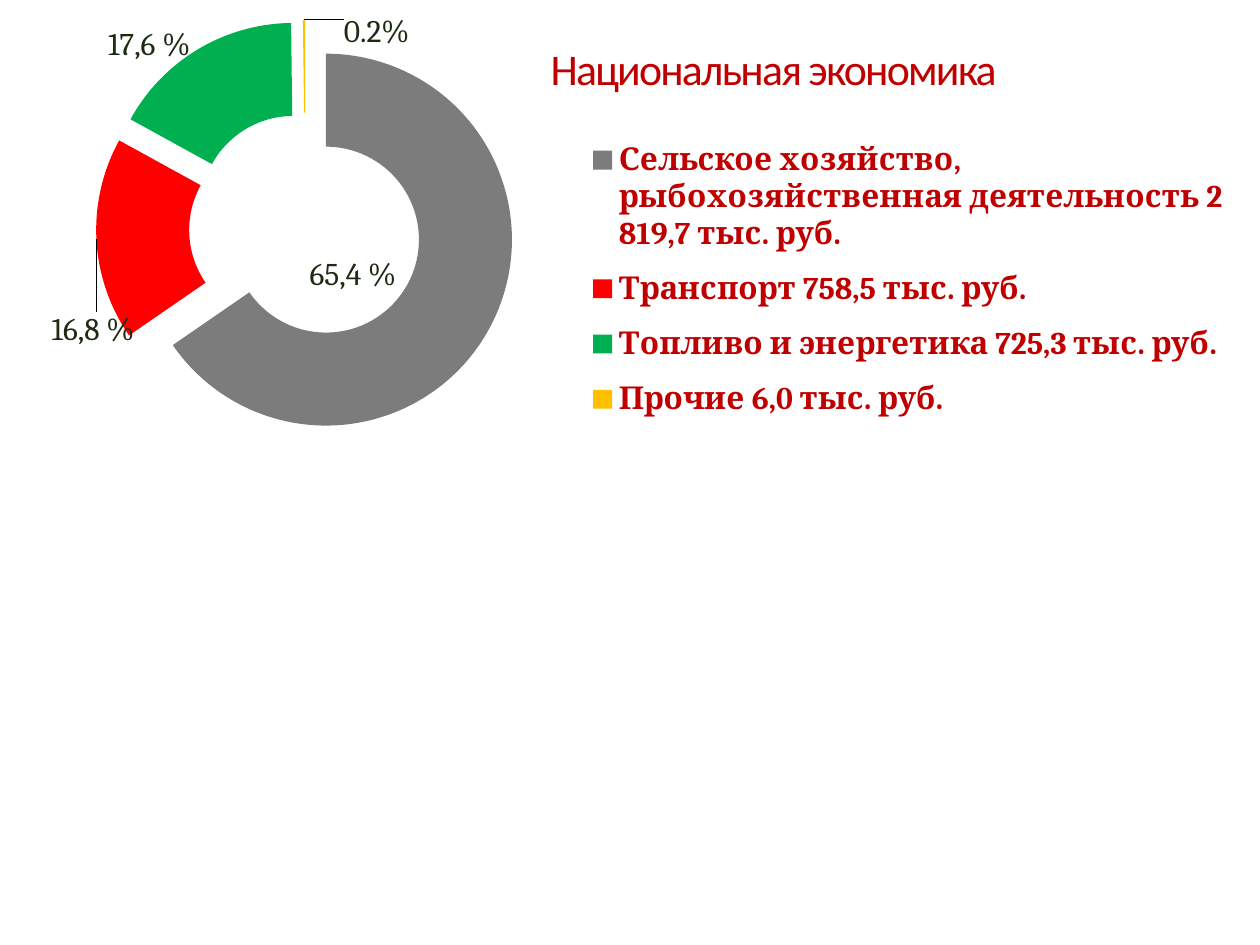
from dataclasses import dataclass
from typing import Optional

from lxml import etree
from pptx import Presentation
from pptx.chart import data as cd
from pptx.dml.color import RGBColor
from pptx.enum import chart as ec
from pptx.enum import text as et
from pptx.oxml import ns
from pptx.util import Inches, Pt

DARK_RED = RGBColor(0xC0, 0x00, 0x00)
INK = RGBColor(0x1C, 0x2B, 0x12)
GRAY = RGBColor(0x7C, 0x7C, 0x7C)
RED = RGBColor(0xFF, 0x00, 0x00)
GREEN = RGBColor(0x00, 0xB0, 0x50)
AMBER = RGBColor(0xFF, 0xC0, 0x00)
PERCENT = "0.0%"


@dataclass
class Sector:
    name: str
    share: float
    color: RGBColor
    label: Optional[str]
    dx: float
    dy: float


SECTORS = [
    Sector("Сельское хозяйство, рыбохозяйственная деятельность 2 819,7 тыс. руб.",
           0.654, GRAY, "65,4 %", -0.08, -0.06),
    Sector("Транспорт 758,5 тыс. руб.", 0.176, RED, "16,8 %", -0.05, 0.19),
    Sector("Топливо и энергетика 725,3 тыс. руб.", 0.168, GREEN, "17,6 %", -0.06, -0.09),
    Sector("Прочие 6,0 тыс. руб.", 0.002, AMBER, None, 0.06, -0.07),
]


def style_font(font, size: float, name: str, color: RGBColor, bold: bool = False) -> None:
    font.size = Pt(size)
    font.name = name
    font.bold = bold
    font.color.rgb = color


def make_layout(**values):
    layout = etree.Element(ns.qn("c:layout"))
    manual = etree.SubElement(layout, ns.qn("c:manualLayout"))
    for tag, value in values.items():
        etree.SubElement(manual, ns.qn(f"c:{tag}")).set("val", str(value))
    return layout


def add_title(s) -> None:
    sp = s.shapes.title
    sp.left, sp.top, sp.width, sp.height = (Inches(v) for v in (4.27, 0.13, 5.53, 0.67))
    tf = sp.text_frame
    tf.text = "Национальная экономика"
    tf.vertical_anchor = et.MSO_ANCHOR.BOTTOM
    p = tf.paragraphs[0]
    p.alignment = et.PP_ALIGN.LEFT
    p.line_spacing = 0.9
    r = p.runs[0]
    style_font(r.font, 25, "Calibri", DARK_RED)
    r.font._element.set("spc", "-100")


def format_sector(point, sector: Sector) -> None:
    point.format.fill.solid()
    point.format.fill.fore_color.rgb = sector.color
    point.format.line.fill.background()
    label = point.data_label
    if sector.label:
        label.text_frame.text = sector.label
        style_font(label.text_frame.paragraphs[0].runs[0].font, 18, "Cambria", INK)
    else:
        style_font(label.font, 18, "Cambria", INK)


def add_chart(s) -> None:
    data = cd.CategoryChartData(number_format=PERCENT)
    data.categories = [sector.name for sector in SECTORS]
    data.add_series("Series 1", [sector.share for sector in SECTORS])
    chart = s.shapes.add_chart(ec.XL_CHART_TYPE.DOUGHNUT, Inches(0.41), Inches(-0.03),
                               Inches(9.57), Inches(3.88), data).chart
    chart.has_title = False
    style_font(chart.font, 18, "Cambria", INK)

    chart.has_legend = True
    legend = chart.legend
    legend.position = ec.XL_LEGEND_POSITION.RIGHT
    legend.include_in_layout = False
    style_font(legend.font, 18, "Cambria", DARK_RED, bold=True)
    for old in legend._element.findall(ns.qn("c:layout")):
        legend._element.remove(old)
    legend._element.find(ns.qn("c:legendPos")).addnext(
        make_layout(xMode="edge", yMode="edge", x=0.44, y=0.26, w=0.54, h=0.64))

    plot = chart.plots[0]
    plot.vary_by_categories = True
    series = plot.series[0]
    labels = series.data_labels
    labels.show_value = True
    labels.number_format = PERCENT
    labels.number_format_is_linked = False
    style_font(labels.font, 18, "Cambria", INK)
    for i, sector in enumerate(SECTORS):
        format_sector(series.points[i], sector)

    for node, sector in zip(chart.element.iter(ns.qn("c:dLbl")), SECTORS):
        layout = make_layout(x=sector.dx, y=sector.dy)
        node.find(ns.qn("c:idx")).addnext(layout)
        if not sector.label:
            fmt = etree.Element(ns.qn("c:numFmt"), formatCode=PERCENT, sourceLinked="0")
            layout.addnext(fmt)

    explosion = etree.Element(ns.qn("c:explosion"), val="25")
    series._element.find(ns.qn("c:dPt")).addprevious(explosion)
    for node in chart.element.iter(ns.qn("c:holeSize")):
        node.set("val", "60")
    area = chart.element.find(f".//{ns.qn('c:plotArea')}")
    for old in area.findall(ns.qn("c:layout")):
        area.remove(old)
    area.insert(0, make_layout(layoutTarget="inner", xMode="edge", yMode="edge",
                               x=0.037, y=0.048, w=0.347, h=0.856))


def main() -> None:
    prs = Presentation()
    prs.slide_width, prs.slide_height = Inches(10), Inches(7.5)
    s = prs.slides.add_slide(prs.slide_layouts[5])
    add_title(s)
    add_chart(s)
    prs.save("out.pptx")


if __name__ == "__main__":
    main()
